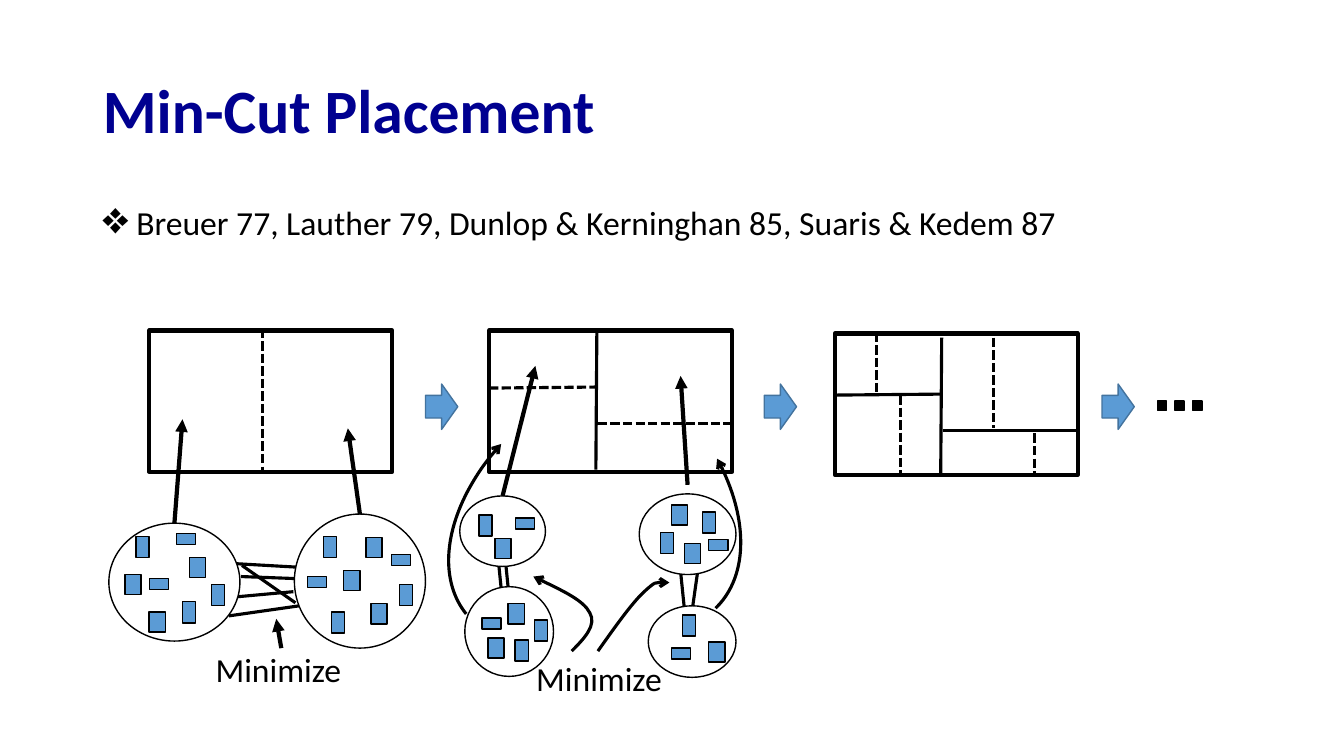
from lxml import etree
from pptx import Presentation
from pptx.dml.color import RGBColor
from pptx.enum.dml import MSO_LINE
from pptx.enum.shapes import MSO_CONNECTOR, MSO_SHAPE
from pptx.enum.text import MSO_ANCHOR, PP_ALIGN
from pptx.oxml.ns import qn
from pptx.util import Inches, Pt

RECTANGLE, ELLIPSE = MSO_SHAPE.RECTANGLE, MSO_SHAPE.OVAL
RIGHT_ARROW, ARC = MSO_SHAPE.RIGHT_ARROW, MSO_SHAPE.ARC
STRAIGHT, DASH = MSO_CONNECTOR.STRAIGHT, MSO_LINE.SQUARE_DOT
BLACK, WHITE, BLUE, DARK_BLUE, NAVY = "000000", "FFFFFF", "5B9BD5", "43739E", "000090"
color = RGBColor.from_string


def style(shape, width, line=BLACK, dash=None, head=None, tail=None):
    shape.line.color.rgb = color(line)
    shape.line.width = Pt(width)
    if dash:
        shape.line.dash_style = dash
    properties = shape._element.spPr
    for tag, arrow in (("a:headEnd", head), ("a:tailEnd", tail)):
        if arrow:
            etree.SubElement(properties.find(qn("a:ln")), qn(tag), type=arrow)
    etree.SubElement(properties, qn("a:effectLst"))


def add_box(container, kind, box, fill, width=1, line=BLACK, head=None):
    shape = container.add_shape(kind, *map(Inches, box))
    if fill:
        shape.fill.solid()
        shape.fill.fore_color.rgb = color(fill)
    else:
        shape.fill.background()
    style(shape, width, line, head=head)
    return shape


presentation = Presentation()
presentation.slide_width, presentation.slide_height = Inches(13.33), Inches(7.5)
slide = presentation.slides.add_slide(presentation.slide_layouts[5])
shapes = slide.shapes

# Chip outlines: first cut, second cuts, third cuts
third_stage, second_stage = shapes.add_group_shape().shapes, shapes.add_group_shape().shapes
for stage, left, top in ((third_stage, 8.28, 3.31), (second_stage, 4.85, 3.28),
                         (shapes, 1.48, 3.28)):
    add_box(stage, RECTANGLE, (left, top, 2.41, 1.4), WHITE, 3)

# Cut lines (dashed when new) and nets between clusters
solid, dashed = {"width": 2.25}, {"width": 2.25, "dash": DASH}
pointer = {"width": 3, "tail": "triangle"}
lines = [
    (third_stage, solid, [(9.34, 3.35, 9.33, 4.72), (8.27, 3.92, 9.33, 3.91),
                          (9.35, 4.27, 10.68, 4.27)]),
    (second_stage, solid, [(5.92, 3.28, 5.91, 4.66)]),
    (second_stage, pointer, [(6.82, 4.81, 6.75, 3.73)]),
    (second_stage, dashed, [(4.85, 3.85, 5.91, 3.84), (5.93, 4.2, 7.26, 4.2)]),
    (shapes, dashed, [(2.6, 3.26, 2.6, 4.68), (8.69, 3.3, 8.69, 3.9),
                      (8.93, 3.92, 8.93, 4.73), (9.85, 3.35, 9.85, 4.25),
                      (10.26, 4.3, 10.26, 4.72)]),
    (shapes, solid, [(2.27, 6.11, 2.97, 6.01), (2.3, 5.59, 3.18, 5.64),
                     (2.39, 5.72, 2.93, 5.74), (2.36, 5.92, 2.91, 5.87),
                     (2.4, 5.61, 2.93, 5.98), (6.92, 5.67, 6.86, 6.09),
                     (6.75, 5.67, 6.79, 6.06), (5.01, 5.53, 5.05, 5.93),
                     (4.94, 5.53, 4.98, 5.93)]),
    (shapes, pointer, [(2.79, 6.43, 2.74, 6.14)]),
]
for container, line_format, segments in lines:
    for segment in segments:
        connector = container.add_connector(STRAIGHT, *map(Inches, segment))
        style(connector, **line_format)

# Clusters: ellipse, arrow target, and cells by size
TALL, WIDE, SQUARE = (0.13, 0.21), (0.19, 0.11), (0.16, 0.2)
clusters = [
    ((6.43, 6.01, 0.87, 0.71), None,
     {TALL: [(6.77, 6.1)], WIDE: [(6.66, 6.43)], SQUARE: [(7.03, 6.37)]}),
    ((4.61, 5.82, 0.88, 0.89), None,
     {TALL: [(5.11, 6.35), (5.3, 6.15)], WIDE: [(4.78, 6.13)],
      SQUARE: [(4.84, 6.33), (5.04, 5.99)]}),
    ((1.08, 5.19, 1.3, 1.17), (1.81, 4.16),
     {TALL: [(1.35, 5.32), (1.81, 5.97), (2.1, 5.8)], WIDE: [(1.48, 5.74), (1.75, 5.29)],
      SQUARE: [(1.88, 5.53), (1.48, 6.07), (1.24, 5.7)]}),
    ((2.92, 5.1, 1.3, 1.33), (3.45, 4.25),
     {TALL: [(3.21, 5.32), (3.29, 6.07), (3.96, 5.8)], WIDE: [(3.88, 5.5), (3.05, 5.72)],
      SQUARE: [(3.41, 5.66), (3.63, 5.33), (3.68, 5.99)]}),
    ((4.56, 4.92, 0.85, 0.7), (5.31, 3.63),
     {TALL: [(4.75, 5.11)], WIDE: [(5.11, 5.14)], SQUARE: [(4.91, 5.34)]}),
    ((6.34, 4.9, 0.96, 0.8), None,
     {TALL: [(6.55, 5.28), (6.97, 5.08)], WIDE: [(7.03, 5.35)],
      SQUARE: [(6.66, 5.01), (6.79, 5.39)]}),
]
for box, target, cells in clusters:
    ellipse = add_box(shapes, ELLIPSE, box, WHITE)
    for size, corners in cells.items():
        for corner in corners:
            add_box(shapes, RECTANGLE, corner + size, BLUE)
    if target:
        target_x, target_y = map(Inches, target)
        connector = shapes.add_connector(STRAIGHT, 0, 0, target_x, target_y)
        connector.begin_connect(ellipse, 0)
        style(connector, **pointer)

# Arcs from the lower clusters to their regions
for left, top, rotation, start, flipped in ((4.17, 3.66, 46.2, 181.72, False),
                                            (4.24, 3.88, 321.1, 174.09, True)):
    arc = add_box(shapes, ARC, (left, top, 3.46, 2.25), None, 2.25, head="arrow")
    arc.rotation = rotation
    arc.adjustments[0], arc.adjustments[1] = start, 0
    if flipped:
        arc._element.spPr.find(qn("a:xfrm")).set("flipH", "1")

# Curved pointers from the second label: start, then two Bezier segments
curves = [
    [(5.67, 6.46), (5.8, 6.33), (5.92, 6.2), (5.85, 6.08),
     (5.79, 5.96), (5.54, 5.84), (5.29, 5.72)],
    [(5.93, 6.46), (6.1, 6.22), (6.27, 5.98), (6.39, 5.87),
     (6.51, 5.76), (6.57, 5.77), (6.64, 5.78)],
]
for curve_points in curves:
    start, *points = [(Inches(x), Inches(y)) for x, y in curve_points]
    builder = shapes.build_freeform(*start)
    builder.add_line_segments(points, close=False)
    curve = builder.convert_to_shape()
    curve.fill.background()
    outline = curve._element.spPr.find(".//" + qn("a:path"))
    segments = outline.findall(qn("a:lnTo"))
    for index in range(0, len(segments), 3):
        bezier = etree.SubElement(outline, qn("a:cubicBezTo"))
        for segment in segments[index:index + 3]:
            bezier.append(segment[0])
            outline.remove(segment)
    style(curve, 2.25, tail="arrow")

# Stage arrows and the trailing dots
for left in (4.22, 7.58, 10.93):
    add_box(shapes, RIGHT_ARROW, (left, 3.81, 0.32, 0.45), BLUE, line=DARK_BLUE)
for index in range(3):
    add_box(shapes, RECTANGLE, (11.48 + 0.175 * index, 3.98, 0.09, 0.09), BLACK)

# Title, reference bullet and labels
texts = [
    (shapes.title, (0.92, 0.4, 11.5, 1.45), "Min-Cut Placement",
     {"size": Pt(44), "bold": True}, NAVY, {"line_spacing": 0.9}),
    (None, (0.92, 2, 11.5, 0.6),
     " Breuer 77, Lauther 79, Dunlop & Kerninghan 85, Suaris & Kedem 87",
     {"size": Pt(24)}, BLACK, {"line_spacing": 0.9, "space_before": Pt(10)}),
    (None, (2.04, 6.39, 1.9, 0.5), "Minimize", {"size": Pt(24)}, BLACK, {}),
    (None, (5.22, 6.48, 1.9, 0.5), "Minimize", {"size": Pt(24)}, BLACK, {}),
]
for shape, box, text, font_format, font_color, paragraph_format in texts:
    shape = shape or shapes.add_textbox(0, 0, 0, 0)
    shape.left, shape.top, shape.width, shape.height = map(Inches, box)
    frame = shape.text_frame
    frame.word_wrap = True
    frame.vertical_anchor = MSO_ANCHOR.MIDDLE if shape.is_placeholder else MSO_ANCHOR.TOP
    paragraph = frame.paragraphs[0]
    paragraph.alignment = PP_ALIGN.LEFT
    run = paragraph.add_run()
    run.text = text
    run.font.name = "Calibri"
    run.font.color.rgb = color(font_color)
    for target, values in ((run.font, font_format), (paragraph, paragraph_format)):
        for name, value in values.items():
            setattr(target, name, value)
    if "space_before" in paragraph_format:
        properties = paragraph._p.get_or_add_pPr()
        properties.set("marL", str(Inches(0.25)))
        properties.set("indent", str(-Inches(0.25)))
        etree.SubElement(properties, qn("a:buSzPct"), val="135000")
        etree.SubElement(properties, qn("a:buChar"), char="❖")

presentation.save("out.pptx")
